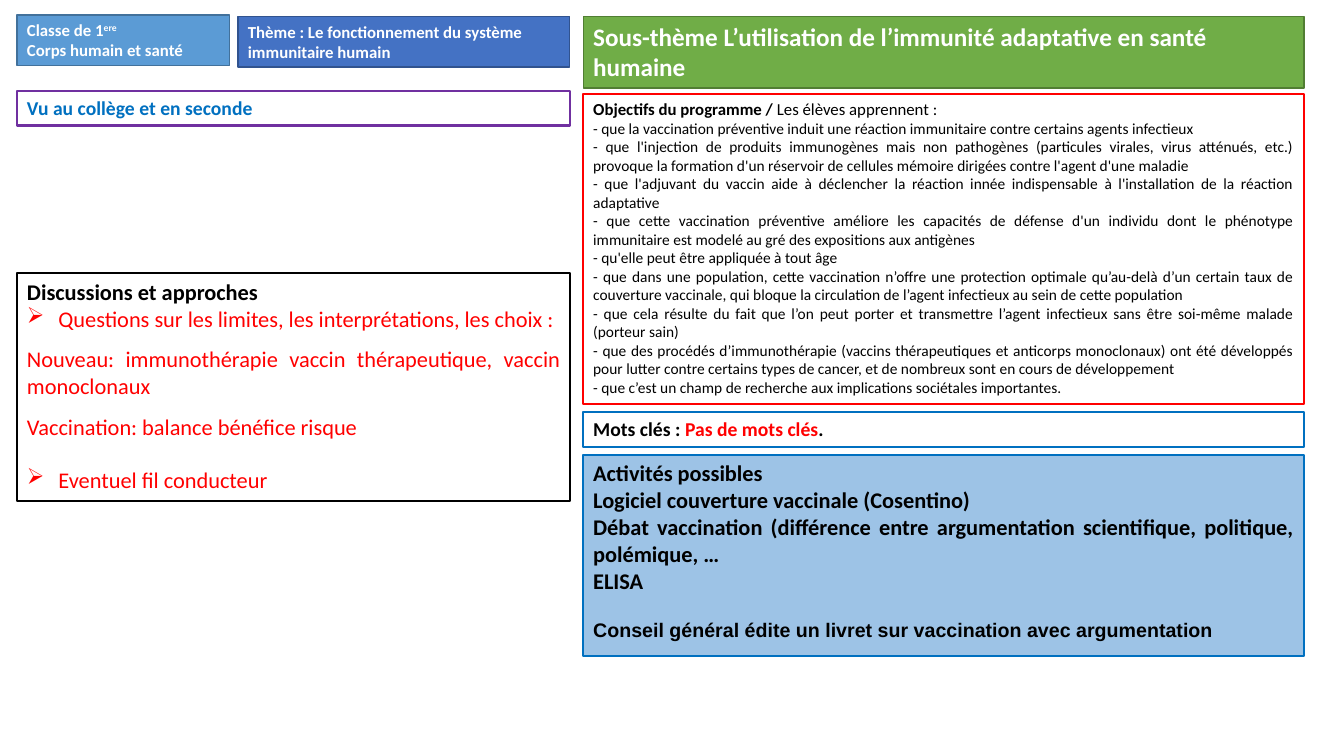
from lxml import etree
from pptx import Presentation
from pptx import util as u
from pptx.dml import color
from pptx.enum import shapes, text
from pptx.oxml import ns

BLACK, WHITE, RED, BLUE = "000000", "FFFFFF", "FF0000", "0070C0"
LEFT, LEFT_WIDTH = 12.2, 395.3
RIGHT, RIGHT_WIDTH = 416.6, 514.8


def rgb(value):
    return color.RGBColor.from_string(value)


def add_box(left, top, width, height, fill, line, weight, paragraphs):
    """Each paragraph: (runs, justified, space before, bullet);
    each run: (wording, size, colour, bold, font, baseline)."""
    box = page.shapes.add_shape(shapes.MSO_SHAPE.RECTANGLE,
                                u.Pt(left), u.Pt(top), u.Pt(width), u.Pt(height))
    box.shadow.inherit = False
    if fill:
        box.fill.solid()
        box.fill.fore_color.rgb = rgb(fill)
    else:
        box.fill.background()
    box.line.color.rgb = rgb(line)
    box.line.width = u.Pt(weight)
    frame = box.text_frame
    frame.word_wrap = True
    frame.vertical_anchor = text.MSO_ANCHOR.TOP
    for index, (runs, justified, before, bullet) in enumerate(paragraphs):
        para = frame.add_paragraph() if index else frame.paragraphs[0]
        para.alignment = text.PP_ALIGN.JUSTIFY if justified else text.PP_ALIGN.LEFT
        para.space_before = u.Pt(before)
        if bullet:
            properties = para._p.get_or_add_pPr()
            properties.set("marL", str(u.Pt(22.5)))
            properties.set("indent", str(u.Pt(-22.5)))
            tint = etree.SubElement(properties, ns.qn("a:buClr"))
            etree.SubElement(tint, ns.qn("a:srgbClr")).set("val", RED)
            symbols = etree.SubElement(properties, ns.qn("a:buFont"))
            symbols.set("typeface", "Wingdings")
            symbols.set("pitchFamily", "2")
            symbols.set("charset", "2")
            # Wingdings draws this letter as an arrowhead
            etree.SubElement(properties, ns.qn("a:buChar")).set("char", "Ø")
        for wording, size, tone, bold, font, baseline in runs:
            span = para.add_run()
            span.text = wording
            span.font.size = u.Pt(size)
            span.font.bold = bold
            span.font.name = font
            span.font.color.rgb = rgb(tone)
            if baseline:
                span._r.get_or_add_rPr().set("baseline", str(baseline * 1000))


deck = Presentation()
deck.slide_width, deck.slide_height = u.Pt(960), u.Pt(540)
page = deck.slides.add_slide(deck.slide_layouts[6])

# Class and theme
class_lines = [
    ([("Classe de 1", 12, WHITE, True, "Calibri", 0),
      ("ere", 12, WHITE, True, "Calibri", 30)], False, 0, False),
    ([("Corps humain et santé", 12, WHITE, True, "Calibri", 0)], False, 0, False),
]
add_box(LEFT, 10.8, 152, 36, "5B9BD5", "42719B", 1, class_lines)

# Boxes with a single line of wording
headings = [
    (170, 11.8, 237, 36, "4472C4", "31538F", 1, 12, WHITE,
     "Thème : Le fonctionnement du système immunitaire humain"),
    (RIGHT, 11.8, RIGHT_WIDTH, 51, "70AD47", "517E33", 1, 18, WHITE,
     "Sous-thème L’utilisation de l’immunité adaptative en santé humaine"),
    (LEFT, 65.2, LEFT_WIDTH, 24.5, None, "7030A0", 1.5, 14, BLUE,
     "Vu au collège et en seconde"),
]
for *frame_style, size, tone, wording in headings:
    add_box(*frame_style, [([(wording, size, tone, True, "Calibri", 0)], False, 0, False)])

# Programme objectives
objectives = [
    "que la vaccination préventive induit une réaction immunitaire contre certains agents infectieux",
    "que l'injection de produits immunogènes mais non pathogènes (particules virales, virus "
    "atténués, etc.) provoque la formation d'un réservoir de cellules mémoire dirigées contre "
    "l'agent d'une maladie",
    "que l'adjuvant du vaccin aide à déclencher la réaction innée indispensable à l'installation "
    "de la réaction adaptative",
    "que cette vaccination préventive améliore les capacités de défense d'un individu dont le "
    "phénotype immunitaire est modelé au gré des expositions aux antigènes",
    "qu'elle peut être appliquée à tout âge",
    "que dans une population, cette vaccination n’offre une protection optimale qu’au-delà d’un "
    "certain taux de couverture vaccinale, qui bloque la circulation de l’agent infectieux au sein "
    "de cette population",
    "que cela résulte du fait que l’on peut porter et transmettre l’agent infectieux sans être "
    "soi-même malade (porteur sain)",
    "que des procédés d’immunothérapie (vaccins thérapeutiques et anticorps monoclonaux) ont été "
    "développés pour lutter contre certains types de cancer, et de nombreux sont en cours de "
    "développement",
    "que c’est un champ de recherche aux implications sociétales importantes.",
]
objective_lines = [
    ([("Objectifs du programme / ", 12, BLACK, True, "Calibri", 0),
      ("Les élèves apprennent :", 12, BLACK, False, "Calibri", 0)], False, 0, False),
]
for objective in objectives:
    objective_lines.append(
        ([("- " + objective, 11, BLACK, False, "Calibri", 0)], True, 0, False))
add_box(RIGHT, 67, RIGHT_WIDTH, 221.8, None, RED, 1.5, objective_lines)

# Discussions
discussion_lines = [
    ([("Discussions et approches", 16, BLACK, True, "Calibri", 0)], False, 0, False),
]
for wording, before, bullet in [
    ("Questions sur les limites, les interprétations, les choix :", 0, True),
    ("Nouveau: immunothérapie vaccin thérapeutique, vaccin monoclonaux", 9.5, False),
    ("Vaccination: balance bénéfice risque", 9.8, False),
    ("Eventuel fil conducteur", 19, True),
]:
    discussion_lines.append(
        ([(wording, 16, RED, False, "Calibri", 0)], True, before, bullet))
add_box(LEFT, 195.2, LEFT_WIDTH, 162.7, None, BLACK, 1.5, discussion_lines)

# Keywords
keyword_runs = [
    (wording, 14, tone, True, "Calibri", 0)
    for wording, tone in [("Mots clés : ", BLACK), ("Pas de mots clés", RED), (".", BLACK)]
]
add_box(RIGHT, 294.6, RIGHT_WIDTH, 24.5, None, BLUE, 1.5, [(keyword_runs, False, 0, False)])

# Activities
activities = [
    "Activités possibles",
    "Logiciel couverture vaccinale (Cosentino)",
    "Débat vaccination (différence entre argumentation scientifique, politique, polémique, … ",
    "ELISA",
]
activity_lines = [
    ([(activity, 16, BLACK, True, "Calibri", 0)], True, 0, False) for activity in activities
]
activity_lines.append(
    ([("Conseil général édite un livret sur vaccination avec argumentation",
       14, BLACK, True, "Arial", 0)], False, 17, False))
add_box(RIGHT, 324.7, RIGHT_WIDTH, 144, "9DC3E6", BLUE, 1.5, activity_lines)

deck.save("out.pptx")
